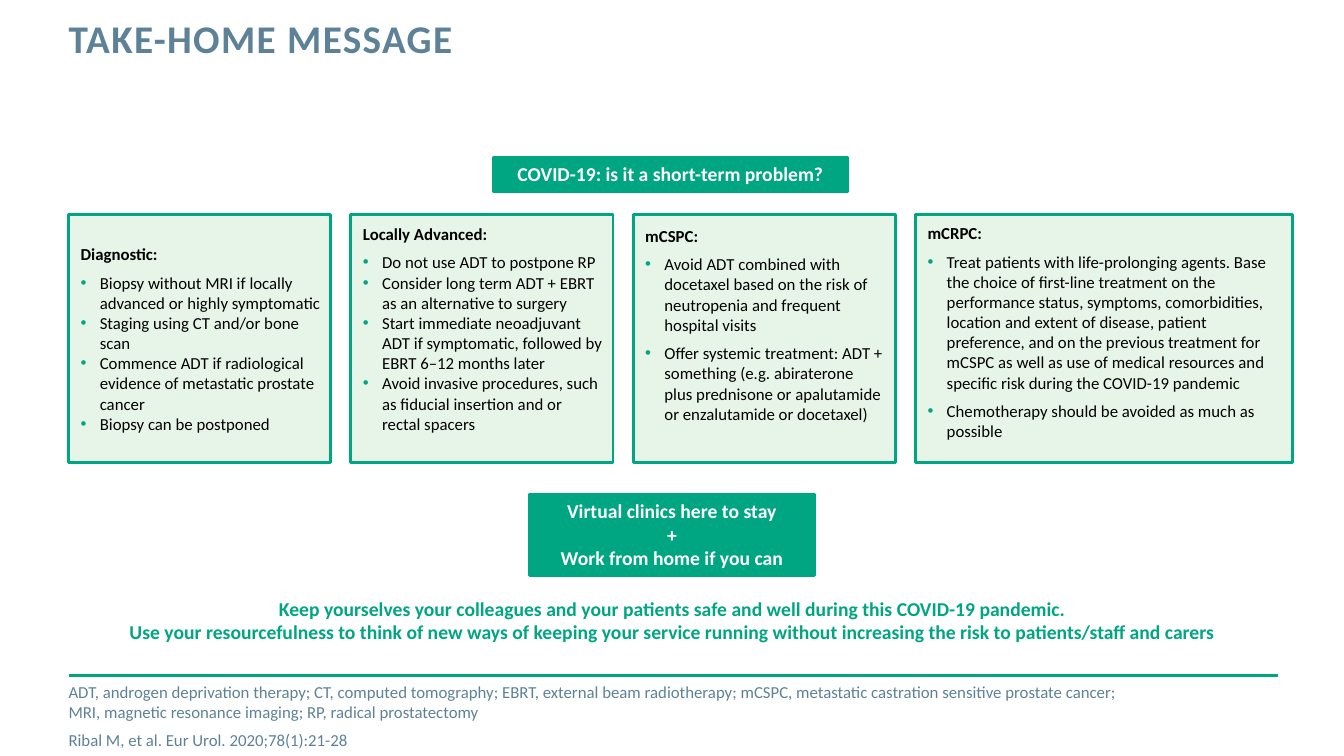
from lxml import etree
from pptx import Presentation
from pptx.dml.color import RGBColor
from pptx.enum.shapes import MSO_CONNECTOR, MSO_SHAPE
from pptx.enum.text import MSO_ANCHOR, MSO_AUTO_SIZE, PP_ALIGN
from pptx.oxml.ns import qn
from pptx.util import Inches, Pt

RECTANGLE, STRAIGHT = MSO_SHAPE.RECTANGLE, MSO_CONNECTOR.STRAIGHT
TOP, MIDDLE = MSO_ANCHOR.TOP, MSO_ANCHOR.MIDDLE
LEFT, CENTER = PP_ALIGN.LEFT, PP_ALIGN.CENTER
NO_AUTOFIT = MSO_AUTO_SIZE.NONE

COLORS = {
    "green": "00A582",
    "pale": "E7F5E9",
    "slate": "5D8298",
    "black": "000000",
    "white": "FFFFFF",
}
HEADING = {"size": Pt(12), "bold": True}
BULLET = {"size": Pt(12), "bold": False}
BANNER = {"size": Pt(14), "bold": True}
TITLE = {"size": Pt(28), "bold": True}
FOOTNOTE = {"size": Pt(12), "bold": False}

MARGIN = 0.68
CARD_TOP, CARD_HEIGHT, CARD_STEP = 2.13, 2.46, 2.8

# Heading, width, anchor, bottom inset, space between bullets, bullets
CARDS = [
    ("Diagnostic:", 2.6, MIDDLE, 0.08, 0, [
        "Biopsy without MRI if locally advanced or highly symptomatic",
        "Staging using CT and/or bone scan",
        "Commence ADT if radiological evidence of metastatic prostate cancer",
        "Biopsy can be postponed",
    ]),
    ("Locally Advanced:", 2.6, MIDDLE, 0.28, 0, [
        "Do not use ADT to postpone RP",
        "Consider long term ADT + EBRT as an alternative to surgery",
        "Start immediate neoadjuvant ADT if symptomatic, followed by EBRT 6–12 months later",
        "Avoid invasive procedures, such as fiducial insertion and or rectal spacers",
    ]),
    ("mCSPC:", 2.6, MIDDLE, 0.36, 6, [
        "Avoid ADT combined with docetaxel based on the risk of neutropenia "
        "and frequent hospital visits",
        "Offer systemic treatment: ADT + something (e.g. abiraterone plus prednisone "
        "or apalutamide or enzalutamide or docetaxel)",
    ]),
    ("mCRPC:", 3.74, TOP, 0.08, 6, [
        "Treat patients with life-prolonging agents. Base the choice of first-line treatment "
        "on the performance status, symptoms, comorbidities, location and extent of disease, "
        "patient preference, and on the previous treatment for mCSPC as well as use of medical "
        "resources and specific risk during the COVID-19 pandemic",
        "Chemotherapy should be avoided as much as possible",
    ]),
]


def rgb(name):
    return RGBColor.from_string(COLORS[name])


def place(shape, left, top, width, height):
    shape.left, shape.top = Inches(left), Inches(top)
    shape.width, shape.height = Inches(width), Inches(height)


def set_frame(frame, anchor, insets=(0.1, 0.05, 0.1, 0.05)):
    frame.word_wrap = True
    frame.auto_size = NO_AUTOFIT
    frame.vertical_anchor = anchor
    for side, inset in zip(("left", "top", "right", "bottom"), insets):
        setattr(frame, f"margin_{side}", Inches(inset))


def set_bullet(paragraph, character=None):
    properties = paragraph._p.get_or_add_pPr()
    indent = Inches(0.19) if character else 0
    properties.set("marL", str(indent))
    properties.set("indent", str(-indent))
    if character:
        color = etree.SubElement(properties, qn("a:buClr"))
        etree.SubElement(color, qn("a:srgbClr"), val=COLORS["green"])
        etree.SubElement(properties, qn("a:buFont"), typeface="Arial")
        etree.SubElement(properties, qn("a:buChar"), char=character)
    else:
        etree.SubElement(properties, qn("a:buNone"))


def write(frame, index, text, style, color, align=LEFT, before=0, after=0, bullet=None):
    paragraph = frame.add_paragraph() if index else frame.paragraphs[0]
    set_bullet(paragraph, bullet)
    paragraph.text = text
    paragraph.alignment = align
    paragraph.space_before, paragraph.space_after = Pt(before), Pt(after)
    for run in paragraph.runs:
        run.font.name = "Calibri"
        run.font.color.rgb = rgb(color)
        for name, value in style.items():
            setattr(run.font, name, value)
    return paragraph


def add_box(slide, left, top, width, height, fill):
    shape = slide.shapes.add_shape(
        RECTANGLE, Inches(left), Inches(top), Inches(width), Inches(height))
    shape.shadow.inherit = False
    shape.fill.solid()
    shape.fill.fore_color.rgb = rgb(fill)
    shape.line.color.rgb = rgb("green")
    shape.line.width = Pt(2)
    return shape


def write_centered(shape, lines, color):
    set_frame(shape.text_frame, TOP)
    for index, line in enumerate(lines):
        write(shape.text_frame, index, line, BANNER, color, CENTER)


def add_card(slide, left, heading, width, anchor, bottom, gap, bullets):
    frame = add_box(slide, left, CARD_TOP, width, CARD_HEIGHT, "pale").text_frame
    set_frame(frame, anchor, (0.12, 0.08, 0.1, bottom))
    write(frame, 0, heading, HEADING, "black", after=6)
    for index, text in enumerate(bullets, 1):
        after = gap if index < len(bullets) else 0
        write(frame, index, text, BULLET, "black", after=after, bullet="•")


def add_rule(slide, left, right, y):
    rule = slide.shapes.add_connector(
        STRAIGHT, Inches(left), Inches(y), Inches(right), Inches(y))
    rule.line.color.rgb = rgb("green")
    rule.line.width = Pt(2)
    etree.SubElement(rule._element.spPr, qn("a:effectLst"))


def fill_title(title):
    place(title, MARGIN, 0.19, 9.56, 0.88)
    set_frame(title.text_frame, TOP, (0, 0, 0, 0))
    paragraph = write(title.text_frame, 0, "TAKE-HOME MESSAGE", TITLE, "slate")
    paragraph.line_spacing = Pt(30)
    paragraph.runs[0].font._element.set("spc", "100")


def fill_footnotes(body):
    place(body, MARGIN, 6.92, 12.14, 0.36)
    set_frame(body.text_frame, MIDDLE, (0, 0, 0, 0))
    notes = [
        "ADT, androgen deprivation therapy; CT, computed tomography; EBRT, external beam "
        "radiotherapy; mCSPC, metastatic castration sensitive prostate cancer;\v"
        "MRI, magnetic resonance imaging; RP, radical prostatectomy",
        "Ribal M, et al. Eur Urol. 2020;78(1):21-28",
    ]
    for index, note in enumerate(notes):
        write(body.text_frame, index, note, FOOTNOTE, "slate", before=6 if index else 0)


def main():
    presentation = Presentation()
    presentation.slide_width, presentation.slide_height = Inches(13.33), Inches(7.5)
    slide = presentation.slides.add_slide(presentation.slide_layouts[1])

    # Title and footnotes
    fill_title(slide.shapes.title)
    fill_footnotes(slide.placeholders[1])
    add_rule(slide, MARGIN, 12.68, 6.7)

    # Question banner
    question = add_box(slide, 4.89, 1.56, 3.52, 0.34, "green")
    write_centered(question, ["COVID-19: is it a short-term problem?"], "white")

    # Disease stage cards
    for index, card in enumerate(CARDS):
        add_card(slide, MARGIN + index * CARD_STEP, *card)

    # Conclusions
    clinics = add_box(slide, 5.25, 4.9, 2.83, 0.81, "green")
    write_centered(
        clinics, ["Virtual clinics here to stay", "+", "Work from home if you can"], "white")
    closing = slide.shapes.add_textbox(
        Inches(0.69), Inches(5.87), Inches(11.96), Inches(0.57))
    write_centered(closing, [
        "Keep yourselves your colleagues and your patients safe and well during this "
        "COVID-19 pandemic.",
        "Use your resourcefulness to think of new ways of keeping your service running "
        "without increasing the risk to patients/staff and carers",
    ], "green")

    presentation.save("out.pptx")


if __name__ == "__main__":
    main()
